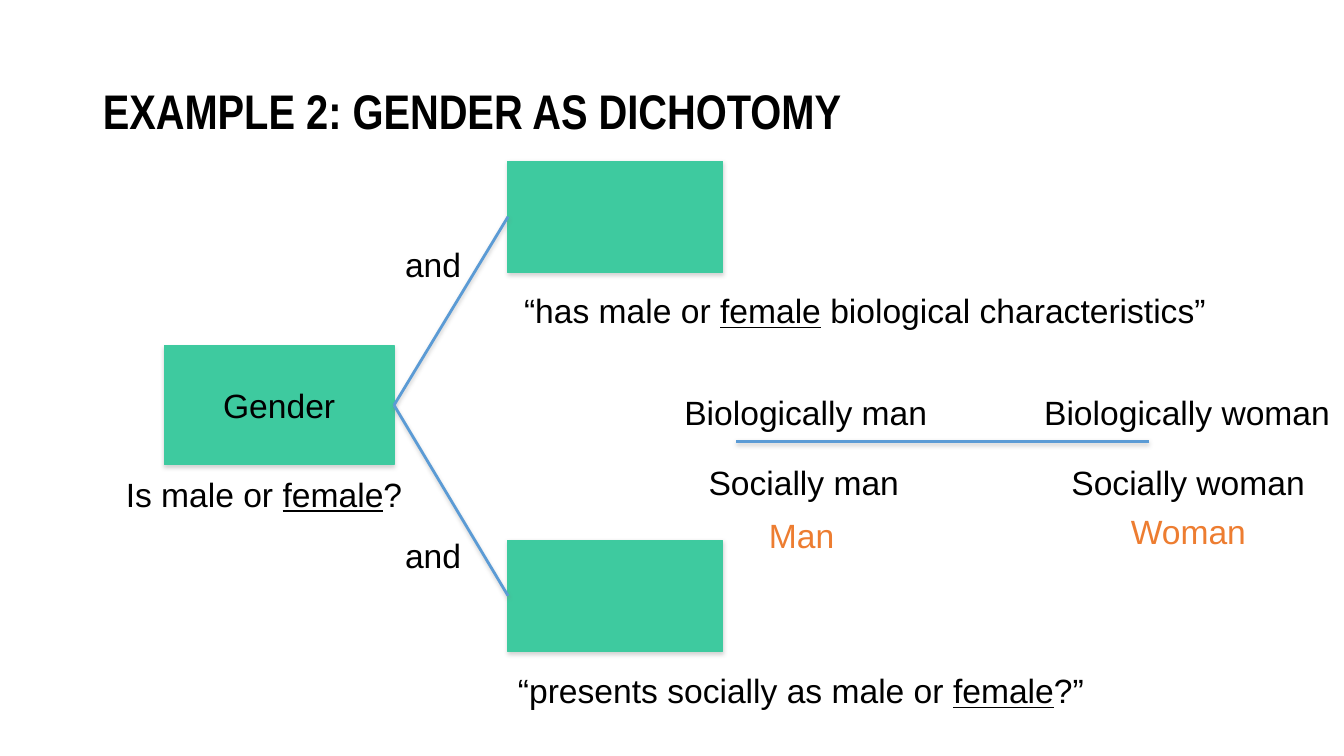
from lxml import etree
from pptx import Presentation
from pptx.dml.color import RGBColor
from pptx.enum.shapes import MSO_CONNECTOR, MSO_SHAPE
from pptx.enum.text import MSO_ANCHOR, MSO_AUTO_SIZE, PP_ALIGN
from pptx.oxml import parse_xml
from pptx.util import Inches, Pt

RECTANGLE, STRAIGHT = MSO_SHAPE.RECTANGLE, MSO_CONNECTOR.STRAIGHT
MIDDLE, NO_FIT = MSO_ANCHOR.MIDDLE, MSO_AUTO_SIZE.NONE
FIT_SHAPE = MSO_AUTO_SIZE.SHAPE_TO_FIT_TEXT
LEFT, CENTER = PP_ALIGN.LEFT, PP_ALIGN.CENTER
LEFT_SITE, RIGHT_SITE = 1, 3

BLACK = RGBColor(0x00, 0x00, 0x00)
GREEN = RGBColor(0x3E, 0xCA, 0x9F)
BLUE = RGBColor(0x5B, 0x9B, 0xD5)
ORANGE = RGBColor(0xED, 0x7D, 0x31)
BODY = {"name": "Arial", "size": Pt(24)}
HEADING = {"name": "Arial Narrow", "size": Pt(34.7), "bold": True}
LABEL_HEIGHT = 6.67

prs = Presentation()
prs.slide_width, prs.slide_height = Inches(13.333), Inches(7.5)
slide = prs.slides.add_slide(prs.slide_layouts[5])
shapes = slide.shapes


def place(left, top, width, height):
    """Turn percentages of the slide's size into lengths."""
    return [int(prs.slide_width * left / 100), int(prs.slide_height * top / 100),
            int(prs.slide_width * width / 100), int(prs.slide_height * height / 100)]


def add_shadow(shape, opacity, distance):
    """Give the shape a soft grey shadow that falls straight down."""
    properties = shape.element.spPr
    for effects in properties.findall("{*}effectLst"):
        properties.remove(effects)
    properties.append(parse_xml(
        '<a:effectLst xmlns:a="http://schemas.openxmlformats.org/drawingml/2006/main">'
        f'<a:outerShdw blurRad="{Pt(3.1)}" dist="{Pt(distance)}" dir="5400000" rotWithShape="0">'
        f'<a:srgbClr val="808080"><a:alpha val="{opacity}000"/></a:srgbClr>'
        '</a:outerShdw></a:effectLst>'))


# Title
title = shapes.title
title.left, title.top, title.width, title.height = place(6.9, 5.33, 86.25, 19.33)
title.text_frame.text = "EXAMPLE 2: GENDER AS DICHOTOMY"
title.text_frame.auto_size = NO_FIT
title.text_frame.vertical_anchor = MIDDLE
heading = title.text_frame.paragraphs[0]
heading.alignment, heading.line_spacing = LEFT, 0.9
heading.font.color.rgb = BLACK
for attribute, value in HEADING.items():
    setattr(heading.font, attribute, value)

# Concept and its two dimensions
concepts = []
for area in ((12.22, 45.73, 17.1, 15.73), (37.8, 21.33, 15.98, 14.67),
             (37.8, 71.47, 15.98, 14.67)):
    concept = shapes.add_shape(RECTANGLE, *place(*area))
    concept.fill.solid()
    concept.fill.fore_color.rgb = concept.line.color.rgb = GREEN
    concept.line.width = Pt(0.75)
    add_shadow(concept, 35, 1.8)
    concepts.append(concept)

gender, *dimensions = concepts
gender.text_frame.text = "Gender"
gender.text_frame.vertical_anchor = MIDDLE
gender_name = gender.text_frame.paragraphs[0]
gender_name.alignment = CENTER
gender_name.font.color.rgb = BLACK
for attribute, value in BODY.items():
    setattr(gender_name.font, attribute, value)

# Branches and the scale between the two poles
scale_right, scale_top, scale_width, _ = place(85.5, 58.4, 30.75, 0)
links = [shapes.add_connector(STRAIGHT, scale_right, scale_top,
                              scale_right - scale_width, scale_top)]
for dimension in dimensions:
    branch = shapes.add_connector(STRAIGHT, 0, 0, 0, 0)
    branch.begin_connect(dimension, LEFT_SITE)
    branch.end_connect(gender, RIGHT_SITE)
    links.append(branch)
for link in links:
    link.line.color.rgb = BLUE
    link.line.width = Pt(2)
    add_shadow(link, 38, 1.6)

# Labels: text, left, top, width, colour
LABELS = [
    ("Is male or female?", 8.62, 62, 22.28, BLACK),
    ("“presents socially as male or female?”", 37.8, 88, 44.03, BLACK),
    ("“has male or female biological characteristics”", 38.25, 37.73, 52.8, BLACK),
    ("and", 29.4, 31.6, 5.7, BLACK),
    ("and", 29.4, 70.13, 5.7, BLACK),
    ("Biologically man", 50.18, 51.2, 19.8, BLACK),
    ("Biologically woman", 76.95, 51.2, 23.03, BLACK),
    ("Socially man", 51.98, 60.4, 15.83, BLACK),
    ("Socially woman", 78.98, 60.4, 19.05, BLACK),
    ("Man", 56.48, 67.47, 6.45, ORANGE),
    ("Woman", 83.4, 66.93, 10.2, ORANGE),
]
for text, left, top, width, color in LABELS:
    frame = shapes.add_textbox(*place(left, top, width, LABEL_HEIGHT)).text_frame
    frame.word_wrap = False
    frame.auto_size = FIT_SHAPE
    for part in filter(None, text.partition("female")):
        run = frame.paragraphs[0].add_run()
        run.text = part
        run.font.color.rgb = color
        run.font.underline = True if part == "female" else None
        for attribute, value in BODY.items():
            setattr(run.font, attribute, value)

prs.save("out.pptx")
